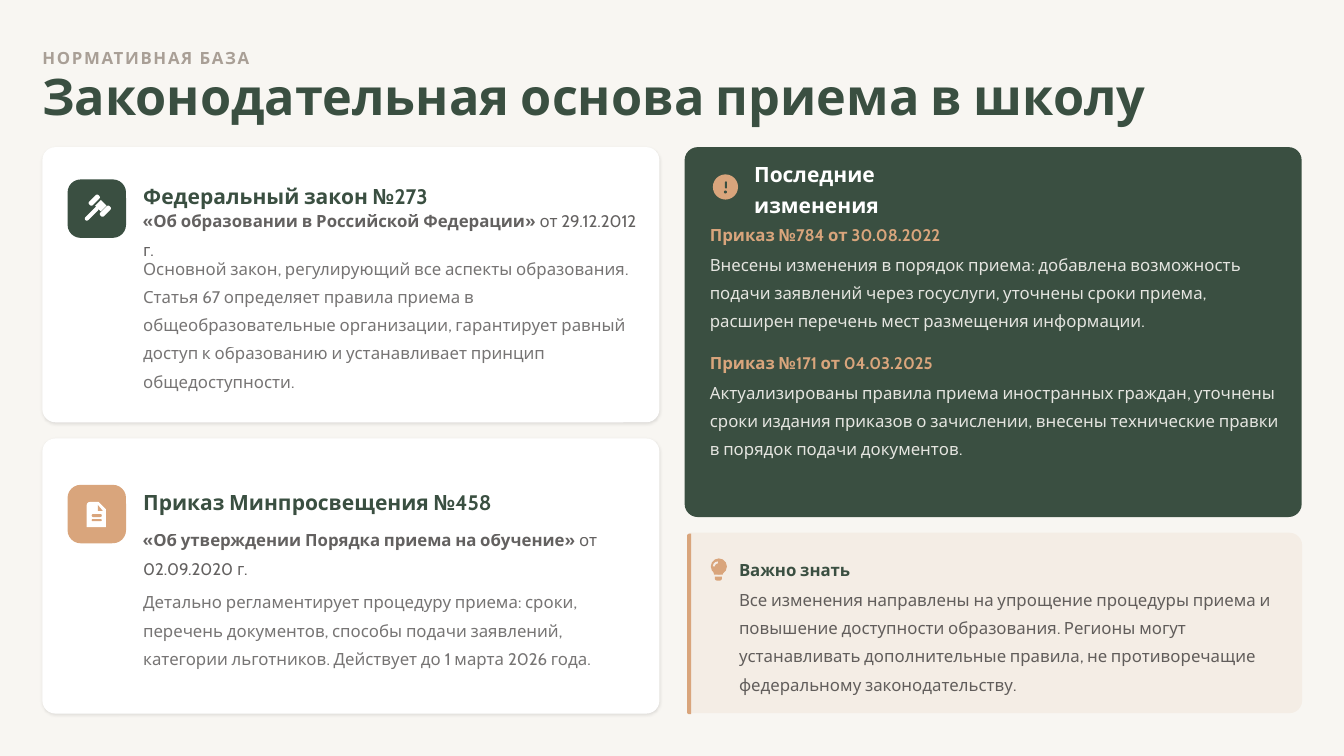
from dataclasses import dataclass

from lxml import etree
from pptx import Presentation
from pptx.dml.color import RGBColor
from pptx.enum.shapes import MSO_SHAPE
from pptx.enum.text import MSO_ANCHOR
from pptx.oxml.ns import qn
from pptx.util import Inches, Pt

ROUNDED = MSO_SHAPE.ROUNDED_RECTANGLE
RECTANGLE = MSO_SHAPE.RECTANGLE
OVAL = MSO_SHAPE.OVAL
TWO_ROUNDED = MSO_SHAPE.ROUND_2_SAME_RECTANGLE
SNIPPED = MSO_SHAPE.SNIP_ROUND_RECTANGLE
TRIANGLE = MSO_SHAPE.RIGHT_TRIANGLE
TRAPEZOID = MSO_SHAPE.TRAPEZOID
BLOCK_ARC = MSO_SHAPE.BLOCK_ARC
MIDDLE = MSO_ANCHOR.MIDDLE


@dataclass(frozen=True)
class Theme:
    font: str = "Cabin"
    background: str = "F8F6F2"
    green: str = "3A4F41"
    sand: str = "D9A57C"
    taupe: str = "A99F96"
    ink: str = "3D3A39"
    white: str = "FFFFFF"
    glint: str = "F4ECE6"
    title_size: int = 36
    heading_size: int = 15
    body_size: int = 12
    corner: float = 0.13


THEME = Theme()


@dataclass(frozen=True)
class Part:
    """A filled preset shape; the box is given before rotation."""
    preset: MSO_SHAPE
    left: float
    top: float
    width: float
    height: float
    color: str
    adjustments: tuple[float, ...] = ()
    rotation: float = 0
    opacity: int = 100
    shadow: bool = False


@dataclass(frozen=True)
class Style:
    color: str
    size: int = THEME.body_size
    bold: bool = False
    spacing: float = 1.4
    opacity: int = 100
    tracking: float = 0


@dataclass(frozen=True)
class LawCard:
    top: float
    icon_top: float
    tile_color: str
    title: str
    act: str
    date: str
    act_height: float
    summary: str
    summary_height: float
    icon: tuple[Part, ...]


@dataclass(frozen=True)
class Amendment:
    order: str
    summary: str


EYEBROW = Style(THEME.taupe, bold=True, spacing=1.3, tracking=1.2)
TITLE = Style(THEME.green, THEME.title_size, True, 0.8)
CARD_TITLE = Style(THEME.green, THEME.heading_size, True, 1.2)
PANEL_TITLE = Style(THEME.white, THEME.heading_size, True, 1.2)
STRONG_INK = Style(THEME.ink, opacity=80)
SOFT_INK = Style(THEME.ink, opacity=70)
ORDER = Style(THEME.sand, bold=True, spacing=1.3)
PANEL_BODY = Style(THEME.background, opacity=90)
NOTE_TITLE = Style(THEME.green, bold=True, spacing=1.3)

GAVEL = (
    Part(ROUNDED, 0.87, 1.96, 0.13, 0.05, THEME.white, (0.4,), -45),
    Part(ROUNDED, 0.98, 2.07, 0.13, 0.05, THEME.white, (0.4,), -45),
    Part(RECTANGLE, 0.96, 2.0, 0.08, 0.08, THEME.white, (), -45),
    Part(ROUNDED, 0.82, 2.1, 0.18, 0.04, THEME.white, (0.5,), -45),
)
DOCUMENT = (
    Part(SNIPPED, 0.86, 4.98, 0.19, 0.25, THEME.white, (0.16, 0.38)),
    Part(TRIANGLE, 0.97, 5.01, 0.05, 0.06, THEME.tile_color if hasattr(THEME, "tile_color") else THEME.sand),
    Part(ROUNDED, 0.91, 5.1, 0.1, 0.03, THEME.sand, (0.5,)),
    Part(ROUNDED, 0.91, 5.15, 0.1, 0.02, THEME.sand, (0.5,)),
)
ALERT = (
    Part(OVAL, 7.07, 1.73, 0.25, 0.25, THEME.sand),
    Part(ROUNDED, 7.19, 1.8, 0.02, 0.07, THEME.green, (0.5,)),
    Part(OVAL, 7.18, 1.89, 0.03, 0.03, THEME.green),
)
BULB = (
    Part(OVAL, 7.05, 5.54, 0.16, 0.16, THEME.sand),
    Part(TRAPEZOID, 7.07, 5.65, 0.11, 0.05, THEME.sand, (0.25,), 180),
    Part(TWO_ROUNDED, 7.09, 5.72, 0.07, 0.04, THEME.sand, (0.5, 0), 180),
    Part(BLOCK_ARC, 7.07, 5.57, 0.1, 0.1, THEME.glint, (108, 162, 0.2)),
)

LAW_CARDS = (
    LawCard(1.46, 1.78, THEME.green, "Федеральный закон №273",
            "«Об образовании в Российской Федерации»", " от 29.12.2012 г.", 0.27,
            "Основной закон, регулирующий все аспекты образования. Статья 67 определяет "
            "правила приема в общеобразовательные организации, гарантирует равный доступ "
            "к образованию и устанавливает принцип общедоступности.", 1.35, GAVEL),
    LawCard(4.35, 4.81, THEME.sand, "Приказ Минпросвещения №458",
            "«Об утверждении Порядка приема на обучение»", " от 02.09.2020 г.", 0.54,
            "Детально регламентирует процедуру приема: сроки, перечень документов, способы "
            "подачи заявлений, категории льготников. Действует до 1 марта 2026 года.",
            0.81, DOCUMENT),
)
AMENDMENTS = (
    Amendment("Приказ №784 от 30.08.2022",
              "Внесены изменения в порядок приема: добавлена возможность подачи заявлений "
              "через госуслуги, уточнены сроки приема, расширен перечень мест размещения "
              "информации."),
    Amendment("Приказ №171 от 04.03.2025",
              "Актуализированы правила приема иностранных граждан, уточнены сроки издания "
              "приказов о зачислении, внесены технические правки в порядок подачи документов."),
)
NOTE = ("Все изменения направлены на упрощение процедуры приема и повышение доступности "
        "образования. Регионы могут устанавливать дополнительные правила, не противоречащие "
        "федеральному законодательству.")


def set_opacity(element, percent: int) -> None:
    if percent < 100:
        for color in element.iter(qn("a:srgbClr")):
            etree.SubElement(color, qn("a:alpha"), val=str(percent * 1000))


def draw_part(slide, part: Part) -> None:
    shape = slide.shapes.add_shape(part.preset, Inches(part.left), Inches(part.top),
                                   Inches(part.width), Inches(part.height))
    for index, value in enumerate(part.adjustments):
        shape.adjustments[index] = value
    shape.rotation = part.rotation
    shape.fill.solid()
    shape.fill.fore_color.rgb = RGBColor.from_string(part.color)
    set_opacity(shape._element.spPr, part.opacity)
    shape.line.fill.background()
    shape.shadow.inherit = False
    if part.shadow:
        effects = shape._element.spPr.find(qn("a:effectLst"))
        shadow = etree.SubElement(effects, qn("a:outerShdw"), blurRad=str(Pt(2.2)),
                                  dist=str(Pt(0.8)), dir="5400000", rotWithShape="0")
        etree.SubElement(shadow, qn("a:srgbClr"), val="000000")
        set_opacity(shadow, 10)


def draw_card(slide, left: float, top: float, width: float, height: float,
              color: str, shadow: bool = False) -> None:
    radius = THEME.corner / min(width, height)
    draw_part(slide, Part(ROUNDED, left, top, width, height, color, (radius,), shadow=shadow))


def draw_text(slide, left: float, top: float, width: float, height: float,
              text: str, style: Style, bold_lead: str = "") -> None:
    box = slide.shapes.add_textbox(Inches(left), Inches(top), Inches(width), Inches(height))
    frame = box.text_frame
    frame.word_wrap = True
    frame.vertical_anchor = MIDDLE
    frame.margin_left = frame.margin_right = frame.margin_top = frame.margin_bottom = 0
    paragraph = frame.paragraphs[0]
    paragraph.line_spacing = style.spacing
    font = paragraph.font
    font.name, font.size, font.bold = THEME.font, Pt(style.size), style.bold
    font.color.rgb = RGBColor.from_string(style.color)
    properties = paragraph._p.pPr.find(qn("a:defRPr"))
    set_opacity(properties, style.opacity)
    if style.tracking:
        properties.set("spc", str(round(style.tracking * 100)))
    if bold_lead:
        lead = paragraph.add_run()
        lead.text = bold_lead
        lead.font.bold = True
    paragraph.add_run().text = text


def draw_law_card(slide, card: LawCard) -> None:
    draw_card(slide, 0.42, card.top, 6.12, 2.73, THEME.white, shadow=True)
    draw_card(slide, 0.67, card.icon_top, 0.58, 0.58, card.tile_color)
    for part in card.icon:
        draw_part(slide, part)
    act_top = card.icon_top + 0.38
    draw_text(slide, 1.42, card.icon_top, 4.98, 0.29, card.title, CARD_TITLE)
    draw_text(slide, 1.42, act_top, 4.96, card.act_height, card.date, STRONG_INK, card.act)
    draw_text(slide, 1.42, act_top + card.act_height + 0.08, 4.96, card.summary_height,
              card.summary, SOFT_INK)


def main() -> None:
    presentation = Presentation()
    presentation.slide_width, presentation.slide_height = Inches(13.33), Inches(7.5)
    slide = presentation.slides.add_slide(presentation.slide_layouts[6])
    slide.background.fill.solid()
    slide.background.fill.fore_color.rgb = RGBColor.from_string(THEME.background)

    # Heading
    draw_text(slide, 0.42, 0.42, 12.58, 0.25, "НОРМАТИВНАЯ БАЗА", EYEBROW)
    draw_text(slide, 0.42, 0.75, 12.75, 0.5, "Законодательная основа приема в школу", TITLE)

    # Laws
    for card in LAW_CARDS:
        draw_law_card(slide, card)

    # Latest amendments
    draw_card(slide, 6.79, 1.46, 6.12, 3.67, THEME.green)
    for part in ALERT:
        draw_part(slide, part)
    draw_text(slide, 7.48, 1.71, 2.32, 0.29, "Последние изменения", PANEL_TITLE)
    for index, amendment in enumerate(AMENDMENTS):
        top = 2.17 + index * 1.27
        draw_text(slide, 7.04, top, 5.71, 0.25, amendment.order, ORDER)
        draw_text(slide, 7.04, top + 0.29, 5.71, 0.81, amendment.summary, PANEL_BODY)

    # Note with accent stripe, both turned on their side
    draw_part(slide, Part(TWO_ROUNDED, 8.97, 3.13, 1.79, 6.1, THEME.sand, (0.07, 0.02), 90, 10))
    draw_part(slide, Part(TWO_ROUNDED, 5.94, 6.17, 1.79, 0.04, THEME.sand, (0.5, 0), -90))
    for part in BULB:
        draw_part(slide, part)
    draw_text(slide, 7.33, 5.5, 5.46, 0.25, "Важно знать", NOTE_TITLE)
    draw_text(slide, 7.33, 5.79, 5.46, 1.08, NOTE, STRONG_INK)

    presentation.save("out.pptx")


if __name__ == "__main__":
    main()
